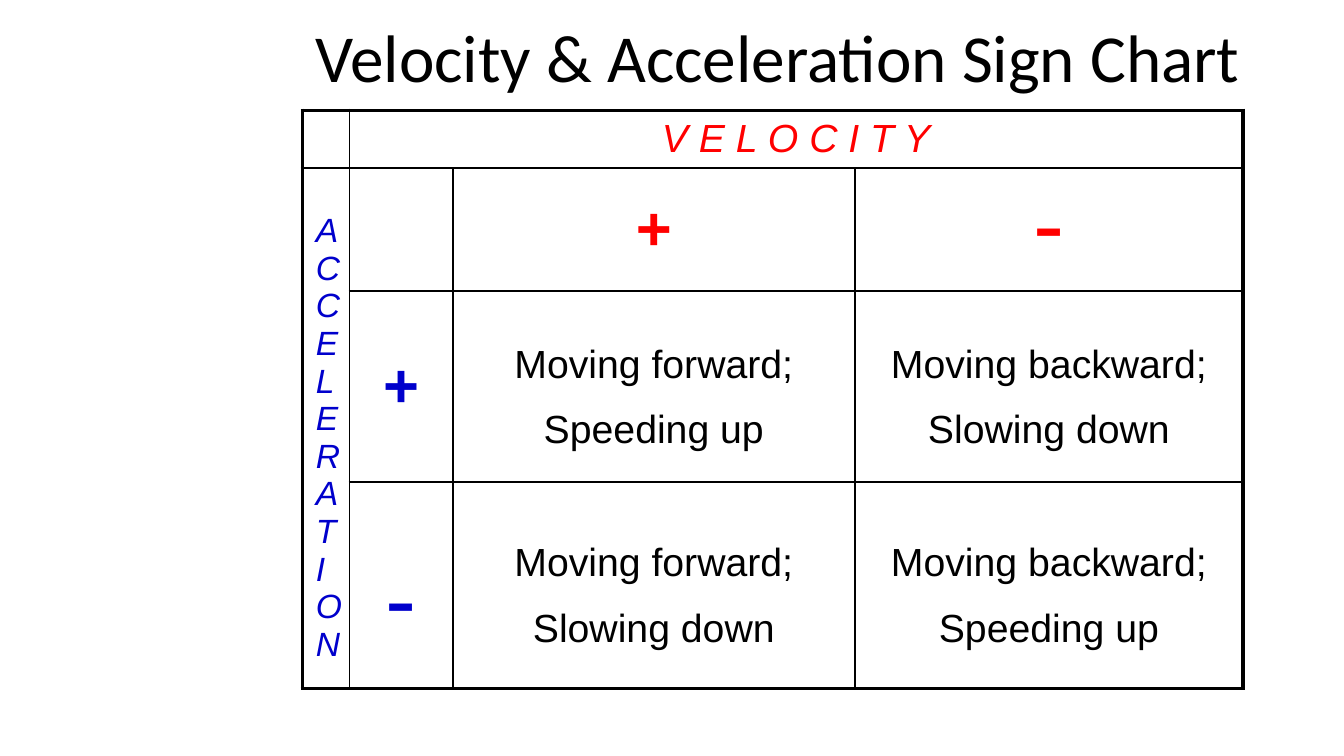
from pptx import Presentation, util as u
from pptx.dml.color import RGBColor
from pptx.enum import text
from pptx.oxml.ns import qn
from lxml import etree

COLORS = {"ink": "000000", "velocity": "FF0000", "acceleration": "0000CC"}
WIDTH = 10
HEIGHT = WIDTH * 9 / 16
COLUMNS = [0.35, 0.77, 2.99, 2.89]
ROWS = [0.41, 0.87, 1.42, 1.54]
THIN, THICK = 1, 2.25
MIDDLE, TOP = text.MSO_ANCHOR.MIDDLE, text.MSO_ANCHOR.TOP
CENTER, LEFT = text.PP_ALIGN.CENTER, text.PP_ALIGN.LEFT


def style(para, size, color="ink", name="Arial", bold=False, italic=False):
    """Set the font of a paragraph and its spans, so that row heights follow it."""
    for span in (para, *para.runs):
        font = span.font
        font.name, font.size = name, u.Pt(size)
        font.bold, font.italic = bold, italic
        font.color.rgb = RGBColor.from_string(COLORS[color])


def add_title(page, words):
    """Place the heading above the table, as shares of the slide."""
    box = page.shapes.add_textbox(
        u.Inches(0.225 * WIDTH), u.Inches(0.034 * HEIGHT),
        u.Inches(0.725 * WIDTH), u.Inches(0.078 * HEIGHT))
    frame = box.text_frame
    frame.word_wrap = True
    frame.vertical_anchor = MIDDLE
    frame.text = words
    style(frame.paragraphs[0], 36, name="Calibri")


def add_border(cell, side, points):
    """Draw one edge of a cell."""
    props = cell._tc.get_or_add_tcPr()
    line = etree.SubElement(props, qn(f"a:ln{side}"), w=str(u.Pt(points)))
    fill = etree.SubElement(line, qn("a:solidFill"))
    etree.SubElement(fill, qn("a:srgbClr"), val=COLORS["ink"])


def frame_cell(cell, row, column):
    """Give a cell thick outer edges, thin inner edges and no fill."""
    outer = {
        "L": column == 0,
        "R": column + cell.span_width == len(COLUMNS),
        "T": row == 0,
        "B": row + cell.span_height == len(ROWS),
    }
    for side, is_outer in outer.items():
        if is_outer or not cell.is_spanned:
            add_border(cell, side, THICK if is_outer else THIN)
    cell.fill.background()


def add_grid(page):
    """Add the empty chart grid and return its table."""
    table = page.shapes.add_table(
        len(ROWS), len(COLUMNS), u.Inches(0.225 * WIDTH), u.Inches(0.146 * HEIGHT),
        u.Inches(sum(COLUMNS)), u.Inches(sum(ROWS))).table
    table.first_row = table.horz_banding = False
    for column, width in zip(table.columns, COLUMNS):
        column.width = u.Inches(width)
    for row, height in zip(table.rows, ROWS):
        row.height = u.Inches(height)
    table.cell(0, 1).merge(table.cell(0, 3))
    table.cell(1, 0).merge(table.cell(3, 0))
    for row in range(len(ROWS)):
        for column in range(len(COLUMNS)):
            frame_cell(table.cell(row, column), row, column)
    return table


def write(cell, words, size, anchor=MIDDLE, align=CENTER, top=0.04, bottom=0.04,
          spacing=1, **font):
    """Write one paragraph into a cell."""
    cell.margin_left = cell.margin_right = u.Inches(0.1)
    cell.margin_top, cell.margin_bottom = u.Inches(top), u.Inches(bottom)
    cell.vertical_anchor = anchor
    cell.text = words
    para = cell.text_frame.paragraphs[0]
    para.alignment = align
    para.line_spacing = spacing
    style(para, size, **font)


def main():
    """Build the sign chart slide."""
    deck = Presentation()
    deck.slide_width, deck.slide_height = u.Inches(WIDTH), u.Inches(HEIGHT)
    page = deck.slides.add_slide(deck.slide_layouts[6])
    add_title(page, "Velocity & Acceleration Sign Chart")
    table = add_grid(page)

    write(table.cell(0, 1), "V E L O C I T Y", 21, color="velocity", italic=True)
    write(table.cell(1, 0), "ACCELERATION", 18, align=LEFT, top=0.14, bottom=0,
          color="acceleration", italic=True)
    write(table.cell(1, 2), "+", 33, color="velocity", bold=True)
    write(table.cell(1, 3), "-", 50, TOP, color="velocity")
    write(table.cell(2, 1), "+", 33, color="acceleration", bold=True)
    write(table.cell(3, 1), "-", 50, top=0.27, color="acceleration")

    directions = ["Moving forward;", "Moving backward;"]
    changes = [["Speeding up", "Slowing down"], ["Slowing down", "Speeding up"]]
    for row, pair in enumerate(changes, 2):
        for column, (direction, change) in enumerate(zip(directions, pair), 2):
            write(table.cell(row, column), f"{direction}\v{change}", 21, spacing=1.5)

    deck.save("out.pptx")


if __name__ == "__main__":
    main()
